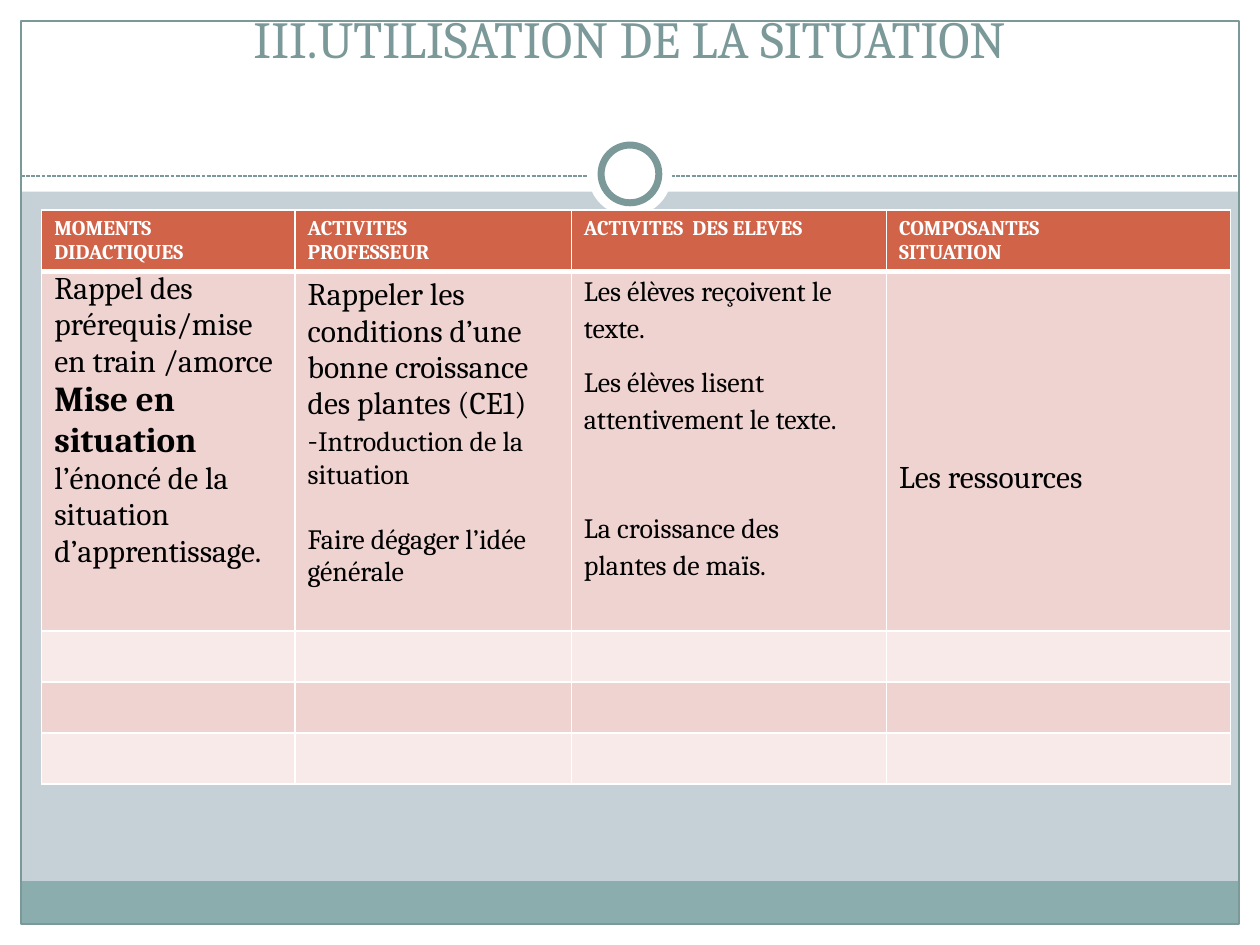
import dataclasses

import pptx
import pptx.dml.color
import pptx.enum.dml
import pptx.enum.shapes
import pptx.enum.text
import pptx.oxml.ns
import pptx.util
from lxml import etree

Pt = pptx.util.Pt
SHAPES = pptx.enum.shapes.MSO_SHAPE


@dataclasses.dataclass(frozen=True)
class Theme:
    """Colours, font and type sizes of the slide."""
    background: str = "C5D1D7"
    paper: str = "FFFFFF"
    accent: str = "7C999A"
    footer: str = "8CADAE"
    header: str = "D16349"
    dark_band: str = "EED3D0"
    light_band: str = "F7EAE9"
    ink: str = "000000"
    font: str = "Cambria"
    title_size: float = 29.7
    header_size: float = 12
    small_size: float = 16
    body_size: float = 18
    strong_size: float = 20


@dataclasses.dataclass(frozen=True)
class Line:
    """One paragraph of a table cell."""
    text: str
    size: float
    bold: bool = False
    before: float = 0
    after: float = 0
    spacing: float = 1.0
    lead: str = ""


THEME = Theme()
HEADINGS = [
    ["MOMENTS DIDACTIQUES"],
    ["ACTIVITES", "PROFESSEUR"],
    ["ACTIVITES  DES ELEVES"],
    ["COMPOSANTES", "SITUATION"],
]
MOMENTS = [
    Line("Rappel des prérequis/mise en train /amorce", THEME.body_size),
    Line("Mise en situation", THEME.strong_size, bold=True),
    Line("l’énoncé de la situation d’apprentissage.", THEME.body_size),
]
TEACHER = [
    Line("Rappeler les conditions d’une bonne croissance des plantes (CE1)", THEME.body_size),
    Line("Introduction de la situation", THEME.small_size, lead="-"),
    Line("Faire dégager l’idée générale", THEME.small_size, before=18.8),
]
PUPILS = [
    Line(text, THEME.small_size, before=before, after=10, spacing=1.15)
    for text, before in [
        ("Les élèves reçoivent le texte.", 0),
        ("Les élèves lisent attentivement le texte.", 0),
        ("La croissance des  plantes de maïs.", 31),
    ]
]
COMPONENTS = [Line("Les ressources", THEME.body_size)]
BODY = [(MOMENTS, 0), (TEACHER, 3.6), (PUPILS, 0), (COMPONENTS, 108)]


def rgb(colour):
    """Return the colour object for a hex value."""
    return pptx.dml.color.RGBColor.from_string(colour)


def add_figure(slide, kind, box, fill=None, line=None, width=0.75):
    """Place a flat preset shape in the box."""
    figure = slide.shapes.add_shape(kind, *map(Pt, box))
    figure.shadow.inherit = False
    if fill:
        figure.fill.solid()
        figure.fill.fore_color.rgb = rgb(fill)
    else:
        figure.fill.background()
    if line:
        figure.line.color.rgb = rgb(line)
        figure.line.width = Pt(width)
    else:
        figure.line.fill.background()


def add_frame(slide, box):
    """Draw the white margins, footer band, outline and divider."""
    left, top, width, height = box
    margin, head = 12, 109.5
    right, bottom = left + width - margin, top + height - margin
    for edge in [
        (left, bottom, width, margin),
        (left, top, width, head),
        (left, top, margin, height),
        (right, top, margin, height),
    ]:
        add_figure(slide, SHAPES.RECTANGLE, edge, THEME.paper)
    inner = width - 2 * margin
    add_figure(slide, SHAPES.RECTANGLE, (left + margin, bottom - 24.5, inner, 24.5), THEME.footer)
    add_figure(slide, SHAPES.RECTANGLE,
               (left + margin, top + margin, inner, height - 2 * margin), line=THEME.accent)
    divider_y = Pt(top + 100.6)
    divider = slide.shapes.add_connector(
        pptx.enum.shapes.MSO_CONNECTOR.STRAIGHT,
        Pt(left + margin), divider_y, Pt(right), divider_y)
    divider.line.color.rgb = rgb(THEME.accent)
    divider.line.width = Pt(0.75)
    divider.line.dash_style = pptx.enum.dml.MSO_LINE.SQUARE_DOT
    etree.SubElement(divider.element.spPr, pptx.oxml.ns.qn("a:effectLst"))
    centre_x, centre_y = left + width / 2, top + 99.4
    for size, line in [(48, None), (33, THEME.accent)]:
        ring = (centre_x - size / 2, centre_y - size / 2, size, size)
        add_figure(slide, SHAPES.OVAL, ring, THEME.paper, line, 4)


def add_title(slide, box):
    """Place and format the title above the frame."""
    title = slide.shapes.title
    title.element.getparent().append(title.element)
    title.left, title.top, title.width, title.height = map(Pt, box)
    frame = title.text_frame
    frame.text = "III.UTILISATION DE LA SITUATION"
    frame.word_wrap = True
    frame.auto_size = pptx.enum.text.MSO_AUTO_SIZE.NONE
    frame.vertical_anchor = pptx.enum.text.MSO_ANCHOR.BOTTOM
    frame.margin_bottom = Pt(38.5)
    paragraph = frame.paragraphs[0]
    paragraph.alignment = pptx.enum.text.PP_ALIGN.CENTER
    paragraph.font.size = Pt(THEME.title_size)
    paragraph.font.name = THEME.font
    paragraph.font.color.rgb = rgb(THEME.accent)


def style_cell(cell, fill, bottom_width=1):
    """Give a cell its borders and fill."""
    qn = pptx.oxml.ns.qn
    properties = cell._tc.get_or_add_tcPr()
    for side, width in [("L", 1), ("R", 1), ("T", 1), ("B", bottom_width)]:
        border = etree.SubElement(properties, qn("a:ln" + side), w=str(Pt(width)))
        solid = etree.SubElement(border, qn("a:solidFill"))
        etree.SubElement(solid, qn("a:srgbClr"), val=THEME.paper)
    cell.fill.solid()
    cell.fill.fore_color.rgb = rgb(fill)


def write_cell(cell, lines, colour, margin=3.6):
    """Write the paragraphs of a cell."""
    cell.margin_top = Pt(margin)
    cell.margin_bottom = Pt(min(margin, 3.6))
    frame = cell.text_frame
    for index, line in enumerate(lines):
        paragraph = frame.add_paragraph() if index else frame.paragraphs[0]
        paragraph.line_spacing = line.spacing
        paragraph.space_before, paragraph.space_after = Pt(line.before), Pt(line.after)
        paragraph.font.name = THEME.font
        paragraph.font.size = Pt(line.size)
        paragraph.font.bold = line.bold
        paragraph.font.color.rgb = rgb(colour)
        if line.lead:
            lead = paragraph.add_run()
            lead.text = line.lead
            lead.font.size = Pt(THEME.body_size)
        paragraph.add_run().text = line.text


def add_activities(slide, box):
    """Build the table of teaching moments and activities."""
    heights = [35, 205.5] + [29.2] * 3
    shares = [2.01, 2.19, 2.5, 2.73]
    table = slide.shapes.add_table(len(heights), len(shares), *map(Pt, box)).table
    table.horz_banding = False
    for column, share in zip(table.columns, shares):
        column.width = Pt(round(box[2] * share / sum(shares), 2))
    for index, (row, height) in enumerate(zip(table.rows, heights)):
        row.height = Pt(height)
        band = THEME.dark_band if index % 2 else THEME.light_band
        for cell in row.cells:
            style_cell(cell, band if index else THEME.header, 1 if index else 3)
    for column, (heading, (lines, margin)) in enumerate(zip(HEADINGS, BODY)):
        labels = [Line(text, THEME.header_size, bold=True) for text in heading]
        write_cell(table.cell(0, column), labels, THEME.paper)
        write_cell(table.cell(1, column), lines, THEME.ink, margin)


def main():
    """Build and save the slide."""
    deck = pptx.Presentation()
    deck.slide_width, deck.slide_height = Pt(720), Pt(540)
    slide = deck.slides.add_slide(deck.slide_layouts.get_by_name("Title Only"))
    slide.background.fill.solid()
    slide.background.fill.fore_color.rgb = rgb(THEME.background)
    add_frame(slide, (0, 0, 720, 540))
    add_title(slide, (24, 18, 672, 60))
    add_activities(slide, (23.8, 120, 679.5, 328.1))
    deck.save("out.pptx")


if __name__ == "__main__":
    main()
